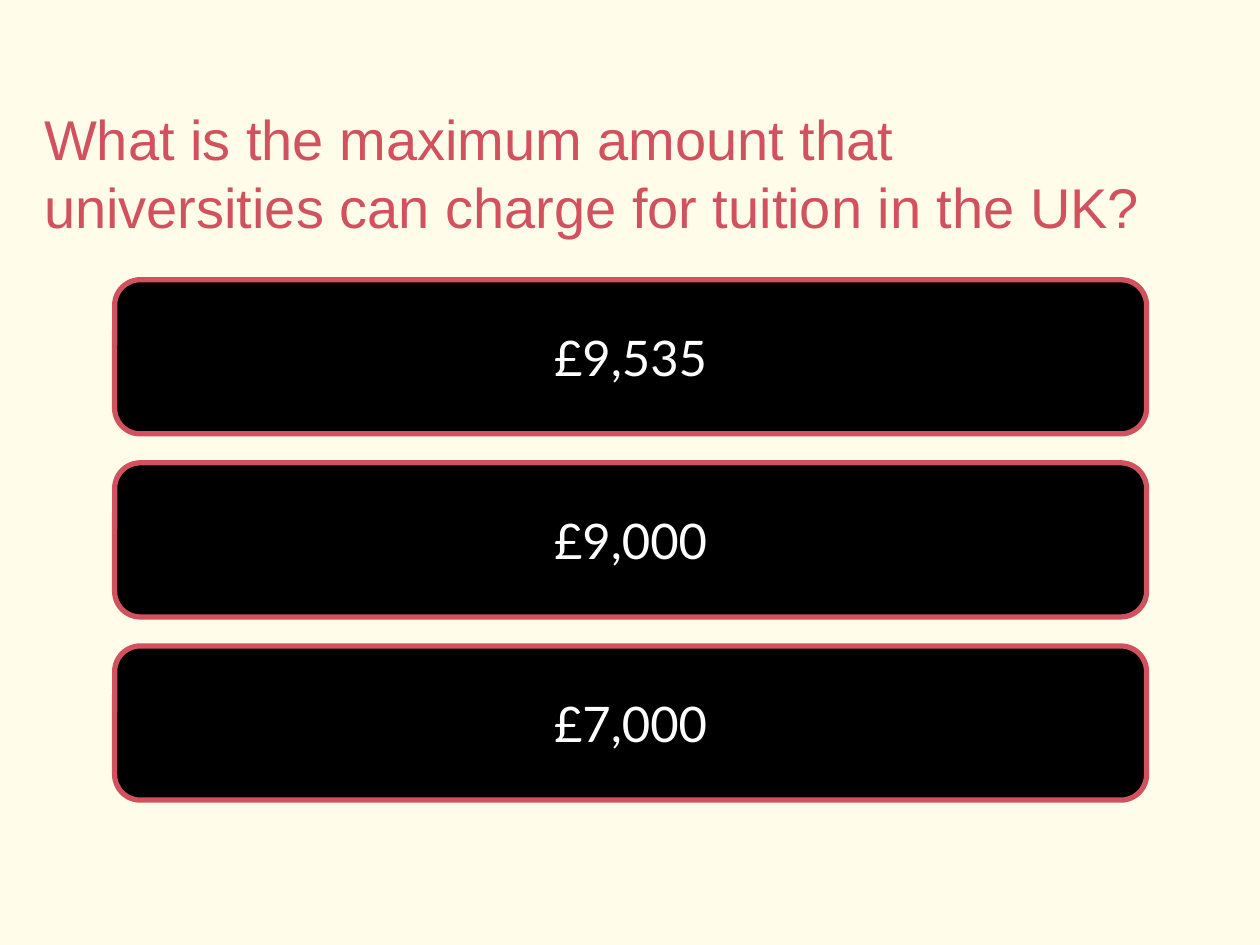
from pptx import Presentation
from pptx.dml.color import RGBColor
from pptx.enum.shapes import MSO_SHAPE as SHAPE
from pptx.enum.text import MSO_ANCHOR as ANCHOR, PP_ALIGN as ALIGN
from pptx.util import Inches, Pt

COLORS = {"cream": "FFFDEA", "red": "D2515E", "black": "000000", "white": "FFFFFF"}


def color(name):
    """Return the named colour."""
    return RGBColor.from_string(COLORS[name])


def add_run(p, text, font, size, fill):
    """Add a styled run to a paragraph."""
    r = p.add_run()
    r.text = text
    r.font.name = font
    r.font.size = Pt(size)
    r.font.color.rgb = color(fill)


def add_question(s, lines, x, y, w, h):
    """Place the question at the bottom of its box, one row per line."""
    tf = s.shapes.add_textbox(Inches(x), Inches(y), Inches(w), Inches(h)).text_frame
    tf.margin_left = tf.margin_right = tf.margin_top = tf.margin_bottom = 0
    tf.vertical_anchor = ANCHOR.BOTTOM
    tf.word_wrap = False
    p = tf.paragraphs[0]
    p.alignment = ALIGN.LEFT
    for i, line in enumerate(lines):
        if i:
            p.add_line_break()
        add_run(p, line, "Arial", 32, "red")


def add_answers(s, answers, x, y, w, h, gap):
    """Stack equal answer buttons in the given box."""
    button_h = (h - gap * (len(answers) - 1)) / len(answers)
    for i, answer in enumerate(answers):
        top = y + i * (button_h + gap)
        sp = s.shapes.add_shape(SHAPE.ROUNDED_RECTANGLE, Inches(x), Inches(top),
                                Inches(w), Inches(button_h))
        sp.shadow.inherit = False
        sp.fill.solid()
        sp.fill.fore_color.rgb = color("black")
        sp.line.color.rgb = color("red")
        sp.line.width = Pt(3)
        tf = sp.text_frame
        tf.word_wrap = True
        tf.vertical_anchor = ANCHOR.MIDDLE
        p = tf.paragraphs[0]
        p.alignment = ALIGN.CENTER
        add_run(p, answer, "Lato", 28, "white")


def main():
    """Build the quiz slide."""
    prs = Presentation()
    prs.slide_width, prs.slide_height = Inches(10), Inches(7.5)
    s = prs.slides.add_slide(prs.slide_layouts[6])
    s.background.fill.solid()
    s.background.fill.fore_color.rgb = color("cream")
    add_question(s, ["What is the maximum amount that",
                     "universities can charge for tuition in the UK?"],
                 0.35, 0.68, 9.06, 1.22)
    add_answers(s, ["£9,535", "£9,000", "£7,000"], 0.91, 2.22, 8.19, 4.13, 0.23)
    prs.save("out.pptx")


if __name__ == "__main__":
    main()
